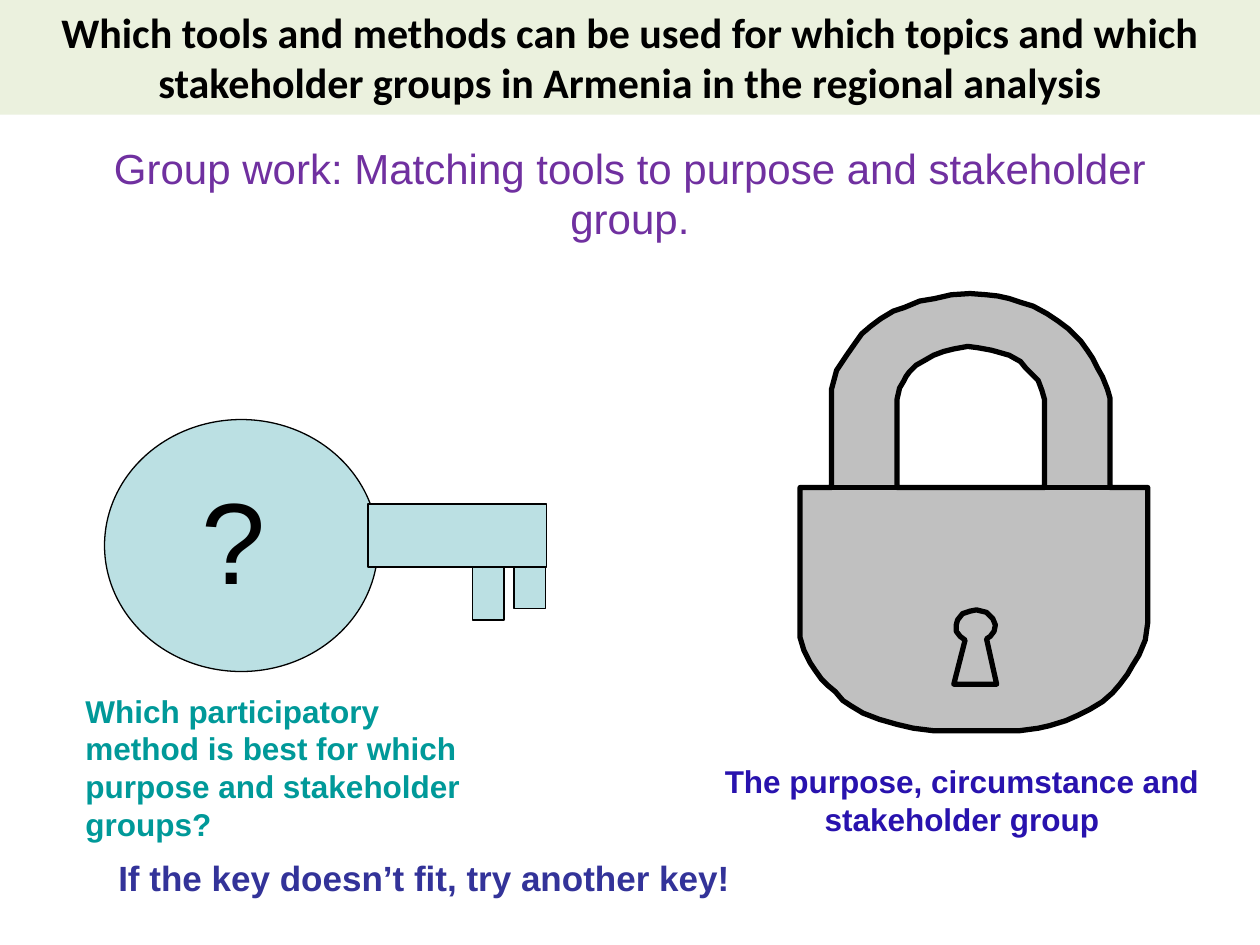
from lxml import etree
from pptx import Presentation
from pptx.dml.color import RGBColor
from pptx.enum.shapes import MSO_CONNECTOR, MSO_SHAPE
from pptx.enum.text import MSO_ANCHOR, PP_ALIGN
from pptx.oxml.ns import qn
from pptx.util import Inches, Pt

RECTANGLE, OVAL = MSO_SHAPE.RECTANGLE, MSO_SHAPE.OVAL
STRAIGHT = MSO_CONNECTOR.STRAIGHT
LEFT, CENTER = PP_ALIGN.LEFT, PP_ALIGN.CENTER
MIDDLE, TOP = MSO_ANCHOR.MIDDLE, MSO_ANCHOR.TOP
BLACK, KEY_BLUE, LOCK_GRAY = "000000", "BBE0E3", "C0C0C0"


def paint(shape, fill, line_width=None):
    """Fill a shape and give it a black outline, or none."""
    shape.shadow.inherit = False
    shape.fill.solid()
    shape.fill.fore_color.rgb = RGBColor.from_string(fill)
    if line_width is None:
        shape.line.fill.background()
    else:
        shape.line.color.rgb = RGBColor.from_string(BLACK)
        shape.line.width = Pt(line_width)


def write(shape, text, size, color, font="Arial", bold=False, align=LEFT, anchor=TOP):
    """Put one formatted paragraph into a shape."""
    text_frame = shape.text_frame
    text_frame.word_wrap = True
    text_frame.vertical_anchor = anchor
    text_frame.text = text
    paragraph = text_frame.paragraphs[0]
    paragraph.alignment = align
    run_font = paragraph.runs[0].font
    run_font.name, run_font.size, run_font.bold = font, Pt(size), bold
    run_font.color.rgb = RGBColor.from_string(color)


presentation = Presentation()
presentation.slide_width, presentation.slide_height = Inches(10), Inches(7.5)
slide = presentation.slides.add_slide(presentation.slide_layouts[6])
shapes = slide.shapes

# Padlock: body with shackle, shackle opening, keyhole
lock_outline = [
    (6.35, 3.87), (6.6, 3.87), (6.6, 3.09), (6.64, 2.94), (6.72, 2.82), (6.79, 2.72),
    (6.84, 2.65), (6.91, 2.59), (6.99, 2.53), (7.09, 2.47), (7.18, 2.44), (7.3, 2.39),
    (7.42, 2.37), (7.55, 2.34), (7.7, 2.33), (7.83, 2.34), (7.92, 2.35), (8.01, 2.37),
    (8.1, 2.4), (8.2, 2.43), (8.31, 2.49), (8.4, 2.55), (8.48, 2.61), (8.58, 2.71),
    (8.63, 2.78), (8.67, 2.84), (8.71, 2.92), (8.75, 2.99), (8.79, 3.09), (8.81, 3.16),
    (8.81, 3.87), (9.11, 3.87), (9.11, 4.94), (9.09, 5.08), (9.04, 5.2), (8.99, 5.28),
    (8.95, 5.35), (8.89, 5.43), (8.83, 5.5), (8.75, 5.57), (8.65, 5.63), (8.55, 5.68),
    (8.46, 5.72), (8.33, 5.76), (8.24, 5.78), (8.09, 5.8), (7.41, 5.8), (7.25, 5.78),
    (7.12, 5.75), (6.98, 5.71), (6.85, 5.66), (6.75, 5.6), (6.69, 5.56), (6.63, 5.49),
    (6.57, 5.44), (6.52, 5.39), (6.47, 5.32), (6.43, 5.26), (6.38, 5.16), (6.35, 5.06),
]
shackle_opening = [
    (7.12, 3.87), (7.12, 3.17), (7.14, 3.08), (7.17, 3.03), (7.19, 2.99), (7.22, 2.95),
    (7.27, 2.9), (7.34, 2.86), (7.41, 2.82), (7.49, 2.79), (7.57, 2.77), (7.68, 2.75),
    (7.76, 2.76), (7.87, 2.78), (7.94, 2.8), (8.01, 2.82), (8.1, 2.87), (8.14, 2.92),
    (8.19, 2.97), (8.24, 3.02), (8.27, 3.1), (8.29, 3.17), (8.29, 3.87),
]
keyhole = [
    (7.83, 5.07), (7.91, 5.43), (7.57, 5.43), (7.66, 5.08), (7.62, 5.05), (7.59, 5.01),
    (7.59, 4.96), (7.6, 4.92), (7.64, 4.87), (7.7, 4.85), (7.75, 4.84), (7.83, 4.86),
    (7.88, 4.91), (7.9, 4.96), (7.89, 5.01), (7.86, 5.05),
]
for contours in ([lock_outline, shackle_opening], [keyhole]):
    builder = None
    for contour in contours:
        points = [(Inches(x), Inches(y)) for x, y in contour]
        if builder is None:
            builder = shapes.build_freeform(*points[0], scale=1.0)
        else:
            builder.move_to(*points[0])
        builder.add_line_segments(points[1:], close=True)
    paint(builder.convert_to_shape(), LOCK_GRAY, 3)

# Top edge of the lock body
edge = shapes.add_connector(STRAIGHT, Inches(6.35), Inches(3.87), Inches(9.11), Inches(3.87))
edge.line.color.rgb = RGBColor.from_string(BLACK)
edge.line.width = Pt(3)
etree.SubElement(edge._element.spPr, qn("a:effectLst"))

# Key: bow, shaft and two teeth
for kind, *box in [
    (OVAL, 0.83, 3.33, 2.17, 2),
    (RECTANGLE, 2.92, 4, 1.42, 0.5),
    (RECTANGLE, 4.08, 4.5, 0.25, 0.33),
    (RECTANGLE, 3.75, 4.5, 0.25, 0.42),
]:
    paint(shapes.add_shape(kind, *map(Inches, box)), KEY_BLUE, 0.75)

# Heading, question mark and captions
for box, text, size, color, bold, align in [
    ((0.5, 1.08, 9, 0.45), "Group work: Matching tools to purpose and stakeholder group.",
     24, "7030A0", False, CENTER),
    ((1.5, 3.67, 1.5, 1.2), "?", 66, BLACK, False, LEFT),
    ((0.58, 5.44, 3.33, 1.31),
     "Which participatory method is best for which purpose and stakeholder groups?",
     18, "009999", True, LEFT),
    ((5.47, 6, 4.33, 0.71), "The purpose, circumstance and stakeholder group",
     18, "2812AE", True, CENTER),
    ((0.84, 6.75, 8.41, 0.44), "If the key doesn’t fit, try another key!",
     20, "333399", True, LEFT),
]:
    write(shapes.add_textbox(*map(Inches, box)), text, size, color, bold=bold, align=align)

# Title band
band = shapes.add_shape(RECTANGLE, Inches(0), Inches(-0.01), Inches(10), Inches(0.92))
paint(band, "EBF1DE")
write(band, "Which tools and methods can be used for which topics and which "
      "stakeholder groups in Armenia in the regional analysis",
      24, BLACK, font="Calibri", bold=True, align=CENTER, anchor=MIDDLE)

presentation.save("out.pptx")
